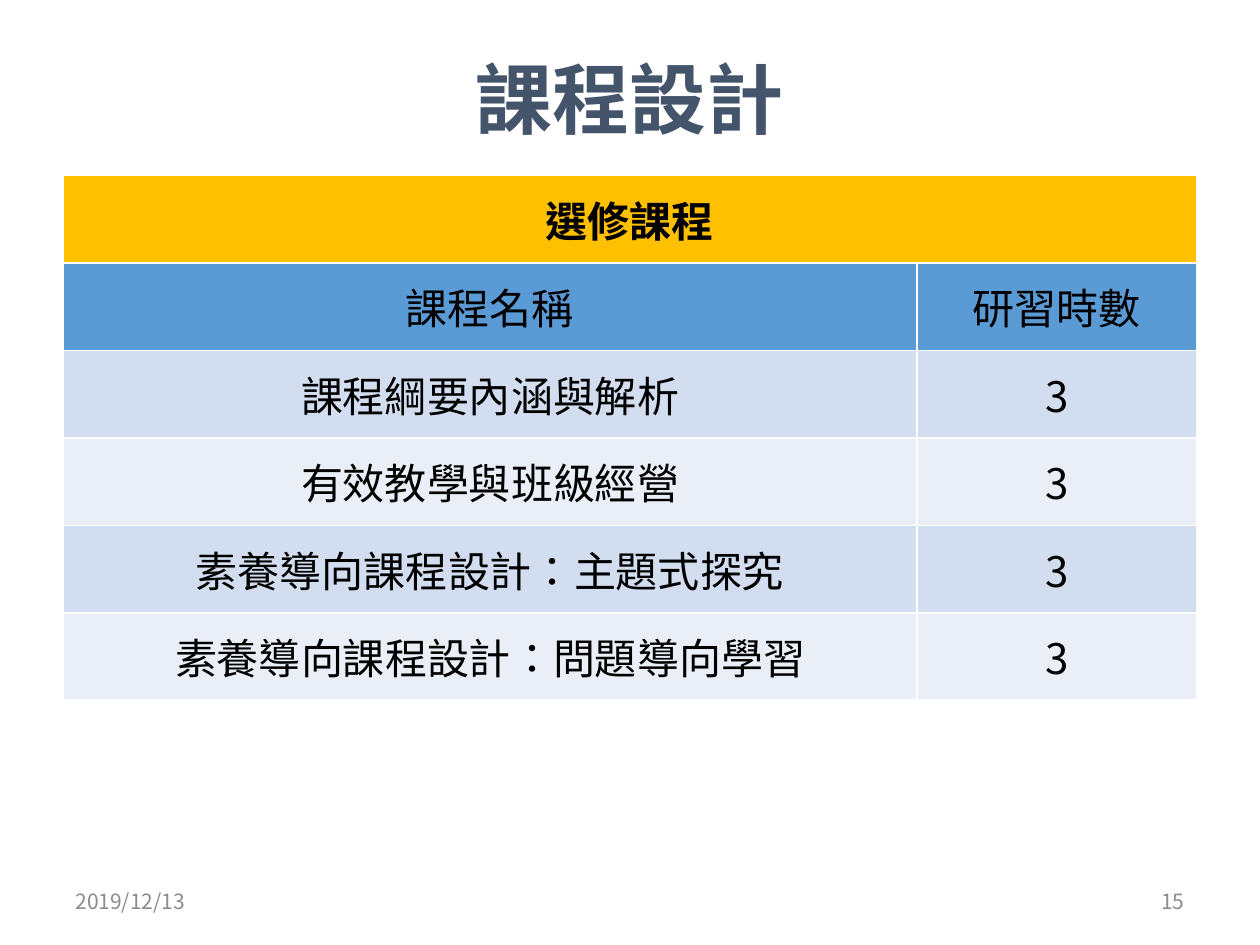
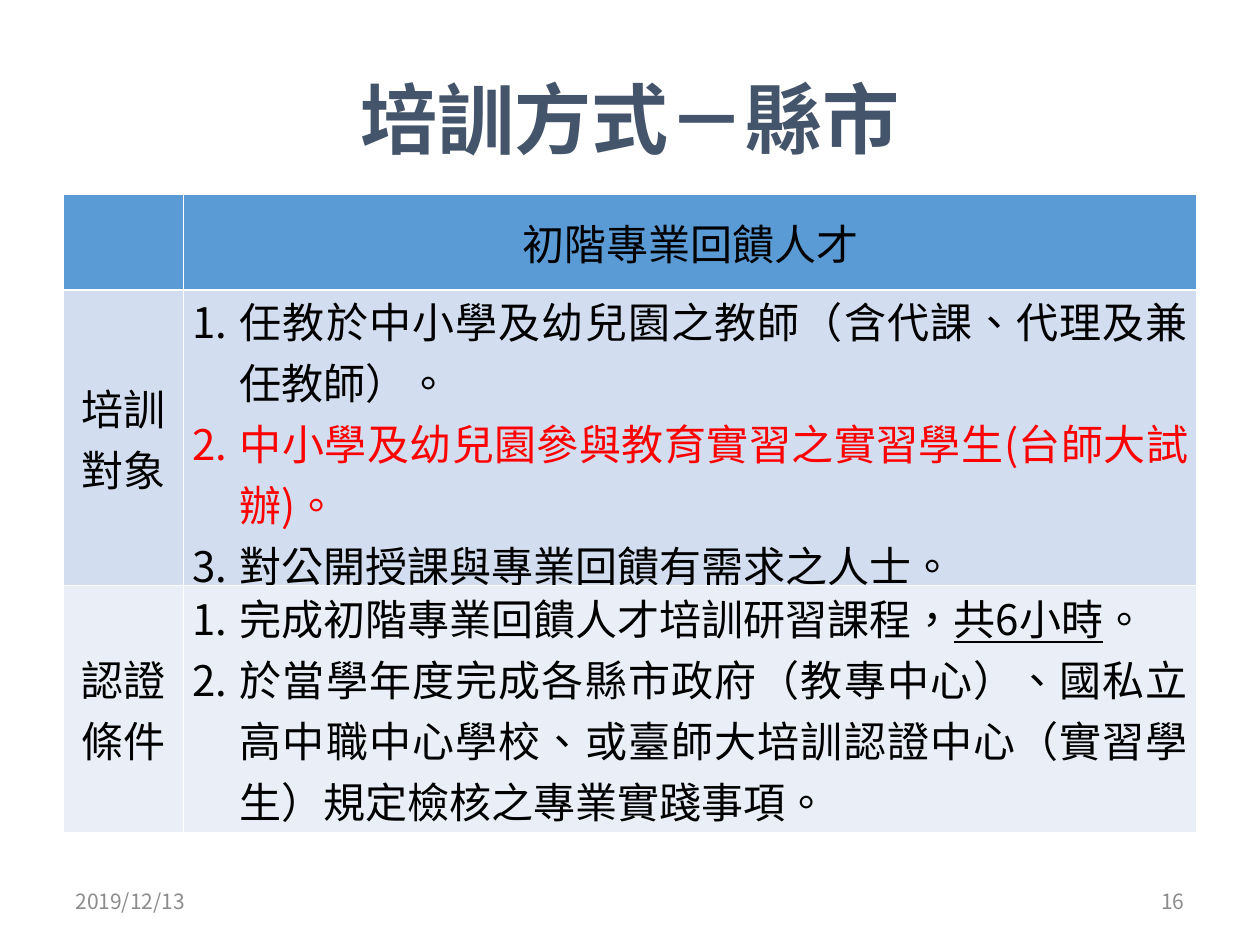
"""Build two slides on course design and training in a shared table style."""
from dataclasses import dataclass

from lxml import etree
from pptx import Presentation
from pptx.dml.color import RGBColor
from pptx.enum.text import MSO_ANCHOR as Anchor, PP_ALIGN as Align
from pptx.oxml.ns import qn
from pptx.util import Pt


@dataclass(frozen=True)
class Theme:
    """Colours, fonts and type sizes."""
    title: str = "44546A"
    footer: str = "8C8C8C"
    text: str = "000000"
    accent: str = "FF0000"
    banner: str = "FFC000"
    header: str = "5B9BD5"
    bands: tuple = ("D2DEEF", "EAEFF7")
    border: str = "FFFFFF"
    font: str = "Noto Sans CJK SC"
    label_font: str = "Times New Roman"
    title_size: int = 44
    body_size: int = 24
    footer_size: int = 12


THEME = Theme()
DATE = "2019/12/13"
MARGIN, WIDTH, HEIGHT = 36, 720, 540


def add_run(p, text, size=THEME.body_size, color=THEME.text, font=THEME.font,
            bold=False, underline=False):
    """Append formatted text to a paragraph."""
    r = p.add_run()
    r.text = text
    f = r.font
    f.size, f.bold, f.underline, f.name = Pt(size), bold, underline, font
    f.color.rgb = RGBColor.from_string(color)
    rPr = r._r.get_or_add_rPr()
    rPr.set("lang", "zh-TW")
    etree.SubElement(rPr, qn("a:ea"), typeface=THEME.font)


def number(p, indent=27):
    """Give a paragraph an automatic number and a hanging indent."""
    pPr = p._p.get_or_add_pPr()
    pPr.set("marL", str(Pt(indent)))
    pPr.set("indent", str(-Pt(indent)))
    etree.SubElement(pPr, qn("a:buFont"), typeface="+mj-lt")
    etree.SubElement(pPr, qn("a:buAutoNum"), type="arabicPeriod")


class Deck:
    """Holds the theme and the current slide."""

    def __init__(self, theme):
        """Start an empty presentation."""
        self.theme = theme
        self.prs = Presentation()
        self.prs.slide_width, self.prs.slide_height = Pt(WIDTH), Pt(HEIGHT)

    def slide(self, title, title_top, page):
        """Add a slide with its title, date and page number."""
        t = self.theme
        self.s = self.prs.slides.add_slide(self.prs.slide_layouts[6])
        self.text(title, MARGIN, title_top, WIDTH - 2 * MARGIN, 90, Align.CENTER,
                  size=t.title_size, color=t.title, bold=True)
        for text, left, align in ((DATE, MARGIN, Align.LEFT),
                                  (str(page), WIDTH - MARGIN - 168, Align.RIGHT)):
            self.text(text, left, 500.5, 168, 28.75, align,
                      size=t.footer_size, color=t.footer)

    def text(self, text, left, top, width, height, align, **fmt):
        """Add a wrapped text box centred vertically."""
        sp = self.s.shapes.add_textbox(Pt(left), Pt(top), Pt(width), Pt(height))
        tf = sp.text_frame
        tf.word_wrap, tf.vertical_anchor = True, Anchor.MIDDLE
        p = tf.paragraphs[0]
        p.alignment = align
        add_run(p, text, **fmt)

    def table(self, top, widths, heights):
        """Add a table with the given column widths and row heights."""
        frame = self.s.shapes.add_table(len(heights), len(widths), Pt(MARGIN), Pt(top),
                                        Pt(sum(widths)), Pt(sum(heights)))
        table = frame.table
        for col, width in zip(table.columns, widths):
            col.width = Pt(width)
        for row, height in zip(table.rows, heights):
            row.height = Pt(height)
        return table

    def cell(self, cell, fill, text="", inset=(7.2, 3.6), **fmt):
        """Style a cell and fill it with centred text."""
        self.cell_style(cell, fill, inset)
        p = cell.text_frame.paragraphs[0]
        p.alignment = Align.CENTER
        if text:
            add_run(p, text, **fmt)

    def numbered_cell(self, cell, fill, items, inset):
        """Style a cell and fill it with a numbered list of runs."""
        self.cell_style(cell, fill, inset)
        tf = cell.text_frame
        for i, runs in enumerate(items):
            p = tf.add_paragraph() if i else tf.paragraphs[0]
            p.alignment = Align.JUSTIFY
            number(p)
            for text, fmt in runs:
                add_run(p, text, **fmt)

    def cell_style(self, cell, fill, inset):
        """Set a cell's borders, fill, margins and anchor."""
        tcPr = cell._tc.get_or_add_tcPr()
        for side in "LRTB":
            ln = etree.SubElement(tcPr, qn("a:ln" + side), w=str(Pt(1)))
            solid = etree.SubElement(ln, qn("a:solidFill"))
            etree.SubElement(solid, qn("a:srgbClr"), val=self.theme.border)
        cell.fill.solid()
        cell.fill.fore_color.rgb = RGBColor.from_string(fill)
        cell.margin_left = cell.margin_right = Pt(inset[0])
        cell.margin_top = cell.margin_bottom = Pt(inset[1])
        cell.vertical_anchor = Anchor.MIDDLE


def course_slide(deck):
    """List the elective courses and their hours."""
    t = deck.theme
    rows = [("選修課程", ""), ("課程名稱", "研習時數")]
    rows += [(name, "3") for name in (
        "課程綱要內涵與解析", "有效教學與班級經營",
        "素養導向課程設計：主題式探究", "素養導向課程設計：問題導向學習")]
    fills = [t.banner, t.header, *t.bands, *t.bands]
    deck.slide("課程設計", 11, 15)
    table = deck.table(100.3, (488, 160), [50] * len(rows))
    table.cell(0, 0).merge(table.cell(0, 1))
    for i, (row, fill) in enumerate(zip(rows, fills)):
        for j, text in enumerate(row):
            deck.cell(table.cell(i, j), fill, text, bold=i == 0)


def training_slide(deck):
    """Show who is trained and how they are certified."""
    t = deck.theme
    inset = (5, 0)
    groups = (
        ("培訓對象", (
            [("任教於中小學及幼兒園之教師（含代課、代理及兼任教師）。", {})],
            [("中小學及幼兒園參與教育實習之實習學生(台師大試辦)。", {"color": t.accent})],
            [("對公開授課與專業回饋有需求之人士。", {})])),
        ("認證條件", (
            [("完成初階專業回饋人才培訓研習課程，", {}),
             ("共6小時", {"underline": True}), ("。", {})],
            [("於當學年度完成各縣市政府（教專中心）、國私立高中職中心學校、"
              "或臺師大培訓認證中心（實習學生）規定檢核之專業實踐事項。", {})])),
    )
    deck.slide("培訓方式－縣市", 22, 16)
    table = deck.table(111.2, (69, 579), (54.5, 169, 141))
    for j, text in enumerate(("", "初階專業回饋人才")):
        deck.cell(table.cell(0, j), t.header, text, inset)
    for i, ((label, items), fill) in enumerate(zip(groups, t.bands), 1):
        deck.cell(table.cell(i, 0), fill, label, inset, font=t.label_font)
        deck.numbered_cell(table.cell(i, 1), fill, items, inset)


def main():
    """Build and save the presentation."""
    deck = Deck(THEME)
    course_slide(deck)
    training_slide(deck)
    deck.prs.save("out.pptx")


if __name__ == "__main__":
    main()
